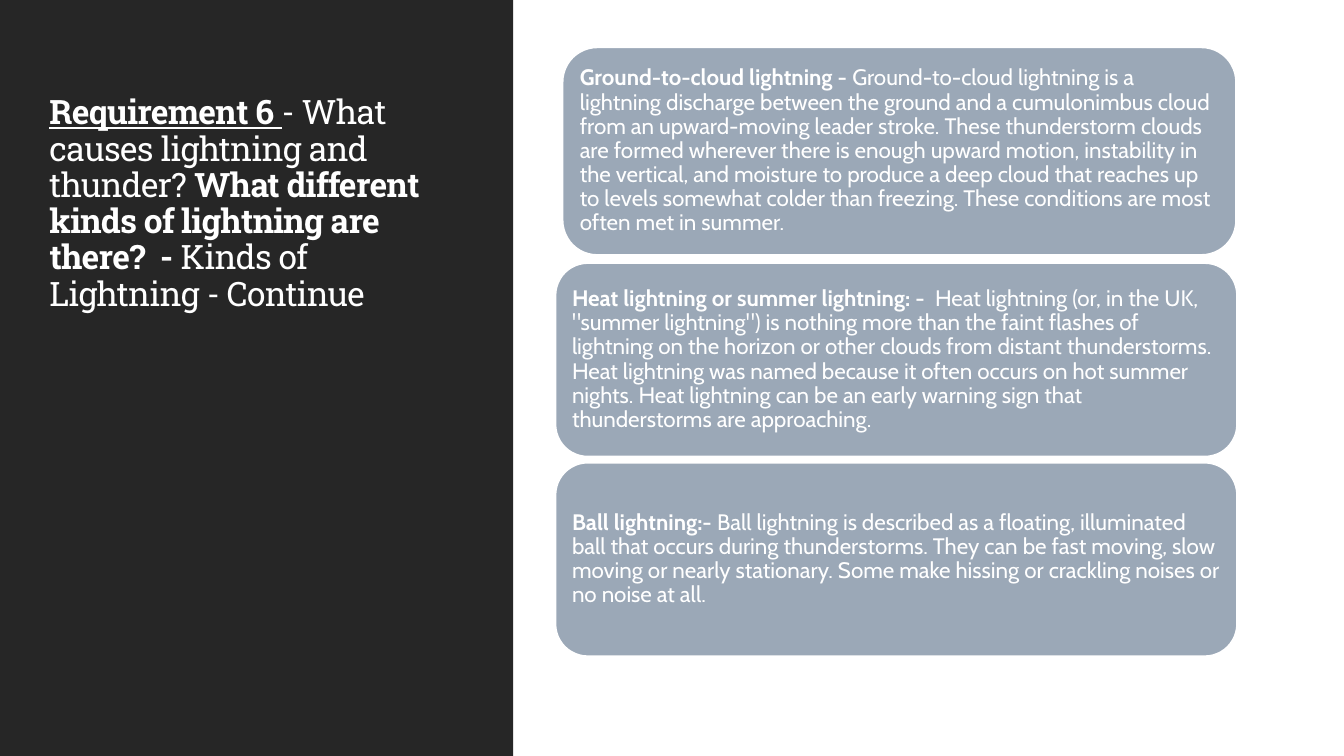
from dataclasses import dataclass

from pptx import Presentation
from pptx.dml.color import RGBColor
from pptx.enum.shapes import MSO_SHAPE as Shape
from pptx.enum.text import MSO_ANCHOR as Anchor, MSO_AUTO_SIZE as AutoSize, PP_ALIGN as Align
from pptx.util import Emu, Pt

PX = 9144
DARK, CARD, WHITE = "262626", "9BA8B7", "FFFFFF"


@dataclass(frozen=True)
class Span:
    text: str
    bold: bool = False
    underline: bool = False


@dataclass(frozen=True)
class Box:
    left: int
    top: int
    width: int
    height: int


@dataclass(frozen=True)
class Card:
    box: Box
    heading: str
    body: str


TITLE = [
    Span("Requirement 6 ", bold=True, underline=True),
    Span("- What causes lightning and thunder? "),
    Span("What different kinds of lightning are there?  - ", bold=True),
    Span("Kinds of Lightning - Continue"),
]

CARDS = [
    Card(
        Box(558, 47, 668, 206),
        "Ground-to-cloud lightning - ",
        "Ground-to-cloud lightning is a lightning discharge between the ground and a "
        "cumulonimbus cloud from an upward-moving leader stroke. These thunderstorm clouds "
        "are formed wherever there is enough upward motion, instability in the vertical, and "
        "moisture to produce a deep cloud that reaches up to levels somewhat colder than "
        "freezing. These conditions are most often met in summer.",
    ),
    Card(
        Box(551, 261, 676, 192),
        "Heat lightning or summer lightning: -  ",
        'Heat lightning (or, in the UK, "summer lightning") is nothing more than the faint '
        "flashes of lightning on the horizon or other clouds from distant thunderstorms. Heat "
        "lightning was named because it often occurs on hot summer nights. Heat lightning can "
        "be an early warning sign that thunderstorms are approaching.",
    ),
    Card(
        Box(551, 459, 676, 192),
        "Ball lightning:- ",
        "Ball lightning is described as a floating, illuminated ball that occurs during "
        "thunderstorms. They can be fast moving, slow moving or nearly stationary. Some make "
        "hissing or crackling noises or no noise at all.",
    ),
]


def px(n: int) -> Emu:
    return Emu(n * PX)


def rgb(color: str) -> RGBColor:
    return RGBColor.from_string(color)


def add_block(slide, kind: Shape, box: Box, fill: str):
    sp = slide.shapes.add_shape(
        kind, px(box.left), px(box.top), px(box.width), px(box.height)
    )
    sp.shadow.inherit = False
    sp.fill.solid()
    sp.fill.fore_color.rgb = rgb(fill)
    sp.line.fill.background()
    return sp


def write(tf, spans: list[Span], font: str, size: int, anchor: Anchor, spacing: int = 0) -> None:
    tf.word_wrap = True
    tf.auto_size = AutoSize.NONE
    tf.vertical_anchor = anchor
    p = tf.paragraphs[0]
    p.alignment = Align.LEFT
    p.line_spacing = 0.9
    for span in spans:
        r = p.add_run()
        r.text = span.text
        r.font.name = font
        r.font.size = Pt(size)
        r.font.bold = span.bold
        r.font.underline = span.underline
        r.font.color.rgb = rgb(WHITE)
        if spacing:
            r.font._element.set("spc", str(spacing))


def add_title(slide) -> None:
    title = slide.shapes.title
    title.left, title.top, title.width, title.height = px(39), px(87), px(417), px(229)
    write(title.text_frame, TITLE, "Roboto Slab", 24, Anchor.BOTTOM, spacing=-50)
    panel = add_block(slide, Shape.RECTANGLE, Box(0, 0, 509, 750), DARK)
    title.element.addprevious(panel.element)


def add_card(slide, card: Card) -> None:
    sp = add_block(slide, Shape.ROUNDED_RECTANGLE, card.box, CARD)
    sp.line.color.rgb = rgb(WHITE)
    sp.line.width = Pt(1.25)
    tf = sp.text_frame
    tf.margin_left = tf.margin_right = tf.margin_top = tf.margin_bottom = px(7)
    write(tf, [Span(card.heading, bold=True), Span(card.body)], "Cabin", 16, Anchor.MIDDLE)


def main() -> None:
    prs = Presentation()
    prs.slide_width, prs.slide_height = px(1333), px(750)
    slide = prs.slides.add_slide(prs.slide_layouts.get_by_name("Title Only"))
    add_title(slide)
    for card in CARDS:
        add_card(slide, card)
    prs.save("out.pptx")


if __name__ == "__main__":
    main()
